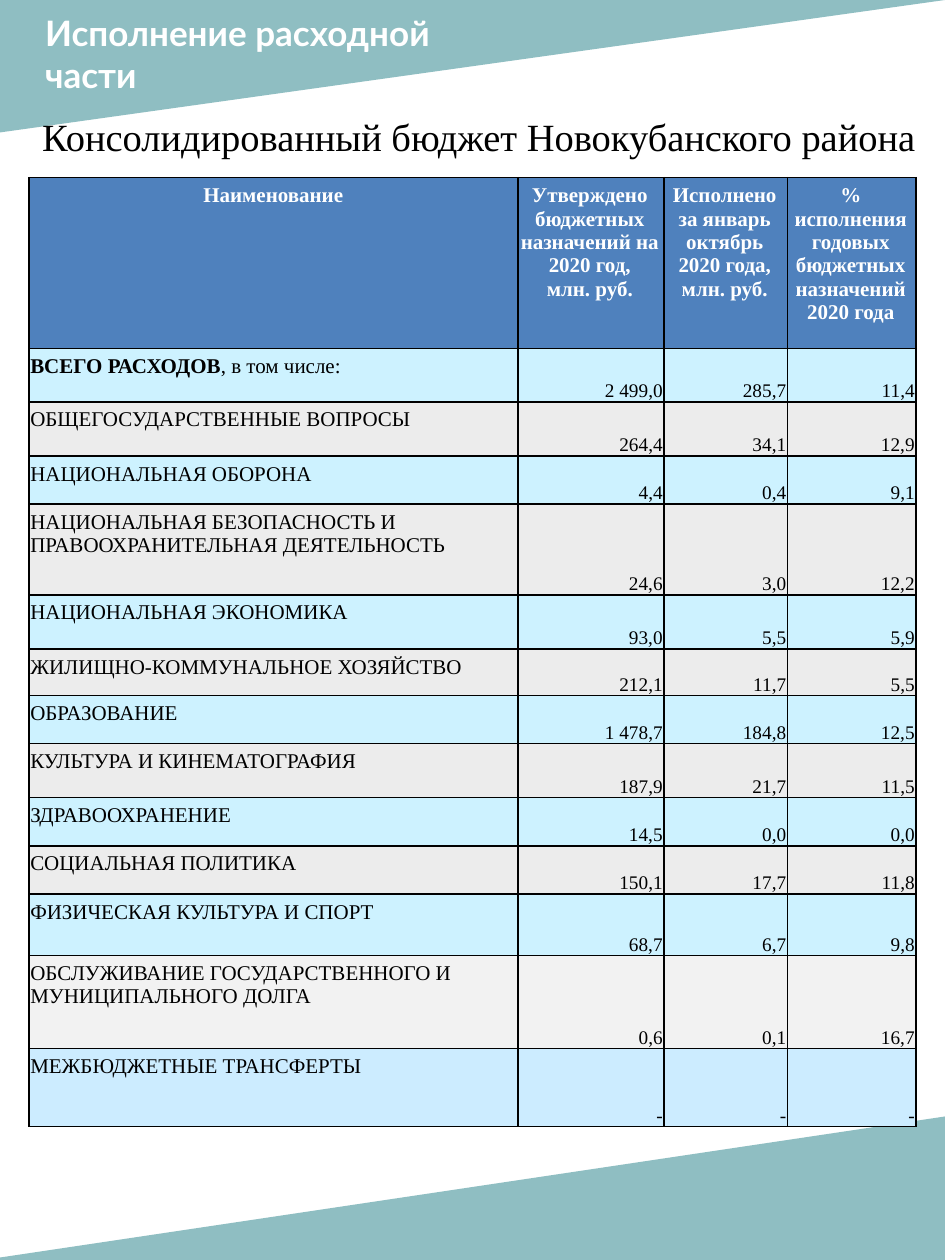
from dataclasses import dataclass

from lxml.etree import SubElement
from pptx import Presentation
from pptx.dml.color import RGBColor
from pptx.enum.shapes import MSO_SHAPE as Shape
from pptx.enum.text import MSO_ANCHOR as Anchor, PP_ALIGN as Align
from pptx.oxml.ns import qn
from pptx.util import Cm, Pt


@dataclass(frozen=True)
class Theme:
    wedge: str = "519AA0"
    wedge_opacity: int = 64
    header: str = "4F81BD"
    bands: tuple = ("CDF2FF", "ECECEC")
    debt_row: str = "F2F2F2"
    transfers_row: str = "CCECFF"
    light: str = "FFFFFF"
    dark: str = "000000"
    border_width: float = 0.96
    title_font: str = "Lato"
    body_font: str = "Times New Roman"
    title_size: int = 20
    subtitle_size: int = 22
    label_size: int = 12
    value_size: int = 11


THEME = Theme()

TITLE = ["Исполнение расходной", "части"]
SUBTITLE = "Консолидированный бюджет Новокубанского района"
HEADERS = [
    ["Наименование"],
    ["Утверждено бюджетных назначений на 2020 год,", "млн. руб."],
    ["Исполнено за январь октябрь 2020 года,", "млн. руб."],
    ["% исполнения годовых бюджетных назначений 2020 года"],
]
TOTAL_LABEL, TOTAL_NOTE = "ВСЕГО РАСХОДОВ", ", в том числе:"
# Height in cm, label, approved, spent, percent
EXPENSES = [
    (1.07, TOTAL_LABEL, "2 499,0", "285,7", "11,4"),
    (1.09, "ОБЩЕГОСУДАРСТВЕННЫЕ ВОПРОСЫ", "264,4", "34,1", "12,9"),
    (0.97, "НАЦИОНАЛЬНАЯ ОБОРОНА", "4,4", "0,4", "9,1"),
    (1.83, "НАЦИОНАЛЬНАЯ БЕЗОПАСНОСТЬ И ПРАВООХРАНИТЕЛЬНАЯ ДЕЯТЕЛЬНОСТЬ",
     "24,6", "3,0", "12,2"),
    (1.09, "НАЦИОНАЛЬНАЯ ЭКОНОМИКА", "93,0", "5,5", "5,9"),
    (0.94, "ЖИЛИЩНО-КОММУНАЛЬНОЕ ХОЗЯЙСТВО", "212,1", "11,7", "5,5"),
    (0.97, "ОБРАЗОВАНИЕ", "1 478,7", "184,8", "12,5"),
    (1.09, "КУЛЬТУРА И КИНЕМАТОГРАФИЯ", "187,9", "21,7", "11,5"),
    (0.97, "ЗДРАВООХРАНЕНИЕ", "14,5", "0,0", "0,0"),
    (0.97, "СОЦИАЛЬНАЯ ПОЛИТИКА", "150,1", "17,7", "11,8"),
    (1.24, "ФИЗИЧЕСКАЯ КУЛЬТУРА И СПОРТ", "68,7", "6,7", "9,8"),
    (1.88, "ОБСЛУЖИВАНИЕ ГОСУДАРСТВЕННОГО И МУНИЦИПАЛЬНОГО ДОЛГА",
     "0,6", "0,1", "16,7"),
    (1.57, "МЕЖБЮДЖЕТНЫЕ ТРАНСФЕРТЫ", "-", "-", "-"),
]
COLUMN_WIDTHS = [9.86, 2.95, 2.49, 2.59]
HEADER_HEIGHT = 3.45
HEADER_MARGINS = (0.03, 0.13, 0.08, 0.13)
LABEL_MARGINS = (0.03, 0.13, 0.03, 0.13)
VALUE_MARGINS = (0.03, 0.03, 0.03, 0)


def add_wedge(slide, box, flip):
    wedge = slide.shapes.add_shape(Shape.RIGHT_TRIANGLE, *map(Cm, box))
    wedge.rotation = 180
    wedge.shadow.inherit = False
    wedge.line.fill.background()
    wedge.fill.solid()
    wedge.fill.fore_color.rgb = RGBColor.from_string(THEME.wedge)
    properties = wedge.element.spPr
    properties.find(qn("a:xfrm")).set(flip, "1")
    color = properties.find(f"{qn('a:solidFill')}/{qn('a:srgbClr')}")
    SubElement(color, qn("a:alpha"), val=str(THEME.wedge_opacity * 1000))


def write(frame, paragraphs, size, color, align=Align.LEFT, font=THEME.body_font):
    """Fill a text frame; each paragraph is a list of (text, bold) runs."""
    frame.word_wrap = True
    for index, runs in enumerate(paragraphs):
        paragraph = frame.add_paragraph() if index else frame.paragraphs[0]
        paragraph.alignment = align
        for text, bold in runs:
            run = paragraph.add_run()
            run.text = text
            run.font.name = font
            run.font.size = Pt(size)
            run.font.bold = bold
            run.font.color.rgb = RGBColor.from_string(color)


def style_cell(cell, fill, margins, anchor=Anchor.TOP):
    (cell.margin_left, cell.margin_top,
     cell.margin_right, cell.margin_bottom) = map(Cm, margins)
    cell.vertical_anchor = anchor
    properties = cell._tc.get_or_add_tcPr()
    for side in ("lnL", "lnR", "lnT", "lnB"):
        line = SubElement(properties, qn(f"a:{side}"), w=str(Pt(THEME.border_width)))
        line_fill = SubElement(line, qn("a:solidFill"))
        SubElement(line_fill, qn("a:srgbClr"), val=THEME.dark)
    cell.fill.solid()
    cell.fill.fore_color.rgb = RGBColor.from_string(fill)


def add_budget_table(slide, left, top):
    heights = [HEADER_HEIGHT] + [row[0] for row in EXPENSES]
    table = slide.shapes.add_table(
        len(heights), len(COLUMN_WIDTHS), Cm(left), Cm(top),
        Cm(sum(COLUMN_WIDTHS)), Cm(sum(heights))).table
    for column, width in zip(table.columns, COLUMN_WIDTHS):
        column.width = Cm(width)
    for row, height in zip(table.rows, heights):
        row.height = Cm(height)

    for column, lines in enumerate(HEADERS):
        cell = table.cell(0, column)
        style_cell(cell, THEME.header, HEADER_MARGINS if column else LABEL_MARGINS)
        write(cell.text_frame, [[(line, True)] for line in lines],
              THEME.label_size, THEME.light, Align.CENTER)

    fills = [THEME.bands[index % 2] for index in range(len(EXPENSES))]
    fills[-2:] = [THEME.debt_row, THEME.transfers_row]
    for row, ((_, label, *values), fill) in enumerate(zip(EXPENSES, fills), start=1):
        is_total = label == TOTAL_LABEL
        runs = [(label, is_total)] + ([(TOTAL_NOTE, False)] if is_total else [])
        cell = table.cell(row, 0)
        style_cell(cell, fill, LABEL_MARGINS)
        write(cell.text_frame, [runs], THEME.label_size, THEME.dark)
        for column, value in enumerate(values, start=1):
            cell = table.cell(row, column)
            style_cell(cell, fill, VALUE_MARGINS, Anchor.BOTTOM)
            write(cell.text_frame, [[(value, False)]],
                  THEME.value_size, THEME.dark, Align.RIGHT)


def main():
    presentation = Presentation()
    presentation.slide_width, presentation.slide_height = Cm(19.05), Cm(25.4)
    slide = presentation.slides.add_slide(presentation.slide_layouts[6])

    add_wedge(slide, (0, 0, 19.05, 2.67), "flipH")
    add_wedge(slide, (-0.33, 22.5, 19.43, 2.9), "flipV")

    title = slide.shapes.add_textbox(Cm(0.66), Cm(0.1), Cm(12.37), Cm(1.96))
    write(title.text_frame, [[(line, True)] for line in TITLE],
          THEME.title_size, THEME.light, font=THEME.title_font)
    subtitle = slide.shapes.add_textbox(Cm(0.58), Cm(2.16), Cm(18.14), Cm(1.19))
    write(subtitle.text_frame, [[(SUBTITLE, False)]],
          THEME.subtitle_size, THEME.dark, Align.CENTER)

    add_budget_table(slide, 0.58, 3.58)
    presentation.save("out.pptx")


if __name__ == "__main__":
    main()
